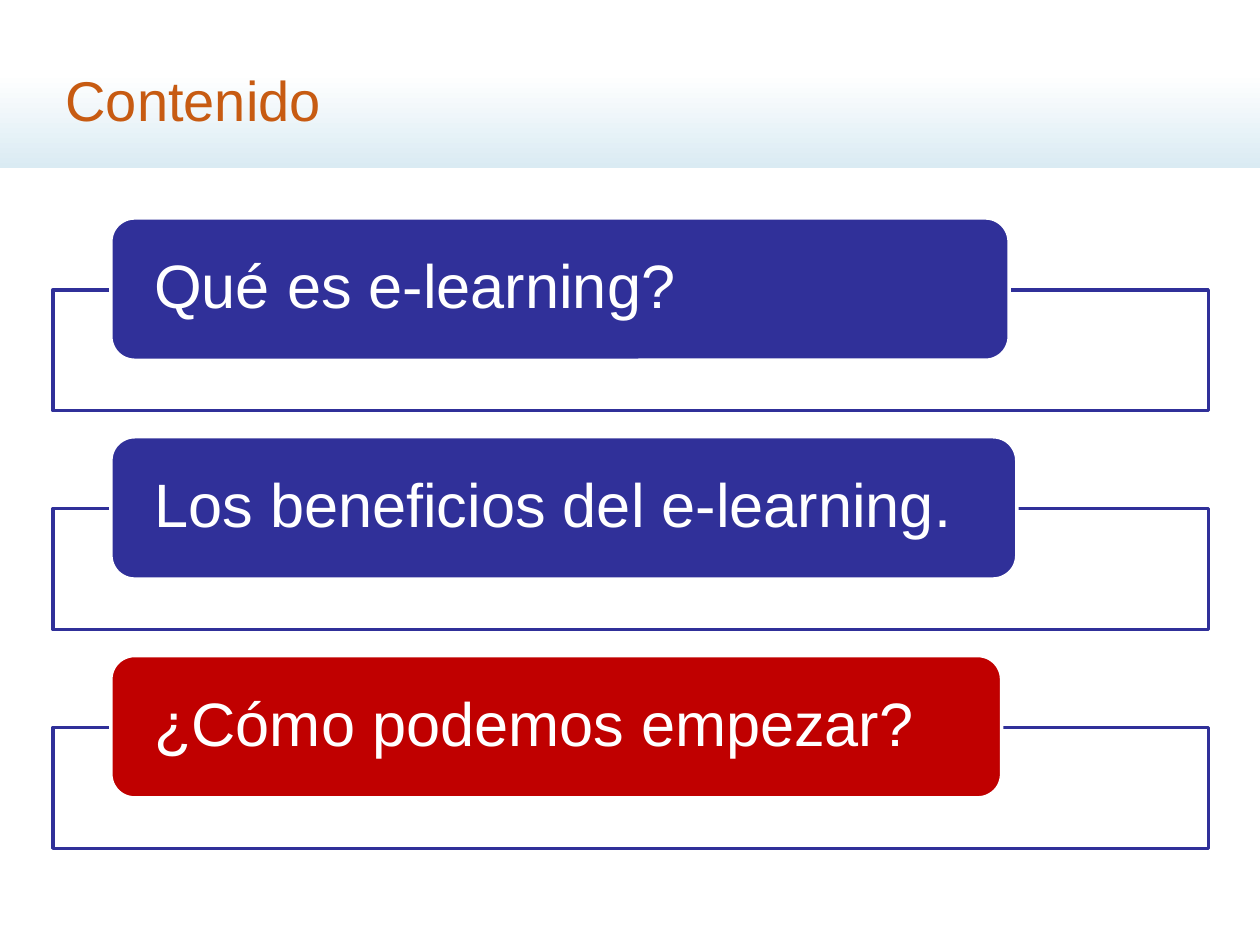
from lxml import etree
from pptx import Presentation
from pptx.dml.color import RGBColor
from pptx.enum.shapes import MSO_SHAPE as Shape
from pptx.enum.text import MSO_ANCHOR as Anchor, MSO_AUTO_SIZE as AutoSize, PP_ALIGN as Align
from pptx.oxml.ns import qn
from pptx.util import Inches, Pt

FONT = "Arial"
WHITE, BLUE, RED, ORANGE, PALE_BLUE = "FFFFFF", "303099", "C00000", "C75B12", "DAEBF3"

# Topic, label width, label colour
TOPICS = [
    ("Qué es e-learning?", 7.13, BLUE),
    ("Los beneficios del e-learning.", 7.19, BLUE),
    ("¿Cómo podemos empezar?", 7.07, RED),
]


def color(value):
    return RGBColor.from_string(value)


def apply_format(target, values):
    for name, value in values.items():
        setattr(target, name, value)


def add_box(slide, kind, left, top, width, height, fill, line):
    shape = slide.shapes.add_shape(kind, *map(Inches, (left, top, width, height)))
    shape.shadow.inherit = False
    shape.fill.solid()
    shape.fill.fore_color.rgb = color(fill)
    shape.line.color.rgb = color(line)
    shape.line.width = Pt(2)
    return shape


def write_text(shape, text, size, text_color, margins):
    frame = shape.text_frame
    apply_format(frame, {
        "text": text, "word_wrap": True, "auto_size": AutoSize.NONE,
        "vertical_anchor": Anchor.MIDDLE,
    })
    horizontal, vertical = map(Inches, margins)
    apply_format(frame, {
        "margin_left": horizontal, "margin_right": horizontal,
        "margin_top": vertical, "margin_bottom": vertical,
    })
    paragraph = frame.paragraphs[0]
    paragraph.alignment = Align.LEFT
    apply_format(paragraph.font, {"name": FONT, "size": Pt(size)})
    paragraph.font.color.rgb = color(text_color)
    return paragraph


def add_header(slide, left, top, width, height):
    # Gradient band, behind the title
    band = slide.shapes.add_shape(
        Shape.RECTANGLE, *map(Inches, (left, top + 0.58, width, height - 0.58)))
    band.shadow.inherit = False
    band.line.fill.background()
    band.fill.gradient()
    band.fill.gradient_angle = 270
    for stop, value in zip(band.fill.gradient_stops, (WHITE, PALE_BLUE)):
        stop.color.rgb = color(value)
    slide.shapes._spTree.insert(2, band._element)

    # Title
    title = slide.shapes.title
    apply_format(title, {
        "left": Inches(left + 0.42), "top": Inches(top + 0.25),
        "width": Inches(width - 0.83), "height": Inches(height - 0.25),
    })
    write_text(title, "Contenido", 32, ORANGE, (0.1, 0.05))


def add_topic(slide, left, top, width, text, label_width, label_color):
    # Outlined frame with a slightly transparent fill
    frame = add_box(slide, Shape.RECTANGLE, left, top + 0.57, width, 0.96, WHITE, BLUE)
    fill_color = frame._element.spPr.find(qn("a:solidFill"))[0]
    etree.SubElement(fill_color, qn("a:alpha")).set("val", "90000")

    # Rounded label over the top edge of the frame
    label = add_box(slide, Shape.ROUNDED_RECTANGLE, left + 0.46, top,
                    label_width, 1.13, label_color, WHITE)
    label.adjustments[0] = 0.167
    paragraph = write_text(label, text, 35, WHITE, (0.29, 0.05))
    apply_format(paragraph, {"line_spacing": 0.9, "space_after": Pt(12.2)})


def add_topic_list(slide, left, top, width, height):
    pitch = height / len(TOPICS)
    for row, topic in enumerate(TOPICS):
        add_topic(slide, left, top + row * pitch, width, *topic)


def main():
    presentation = Presentation()
    presentation.slide_width, presentation.slide_height = Inches(10), Inches(7.5)
    slide = presentation.slides.add_slide(presentation.slide_layouts[5])
    add_header(slide, 0, 0, 10, 1.33)
    add_topic_list(slide, 0.42, 1.73, 9.17, 5.21)
    presentation.save("out.pptx")


if __name__ == "__main__":
    main()
